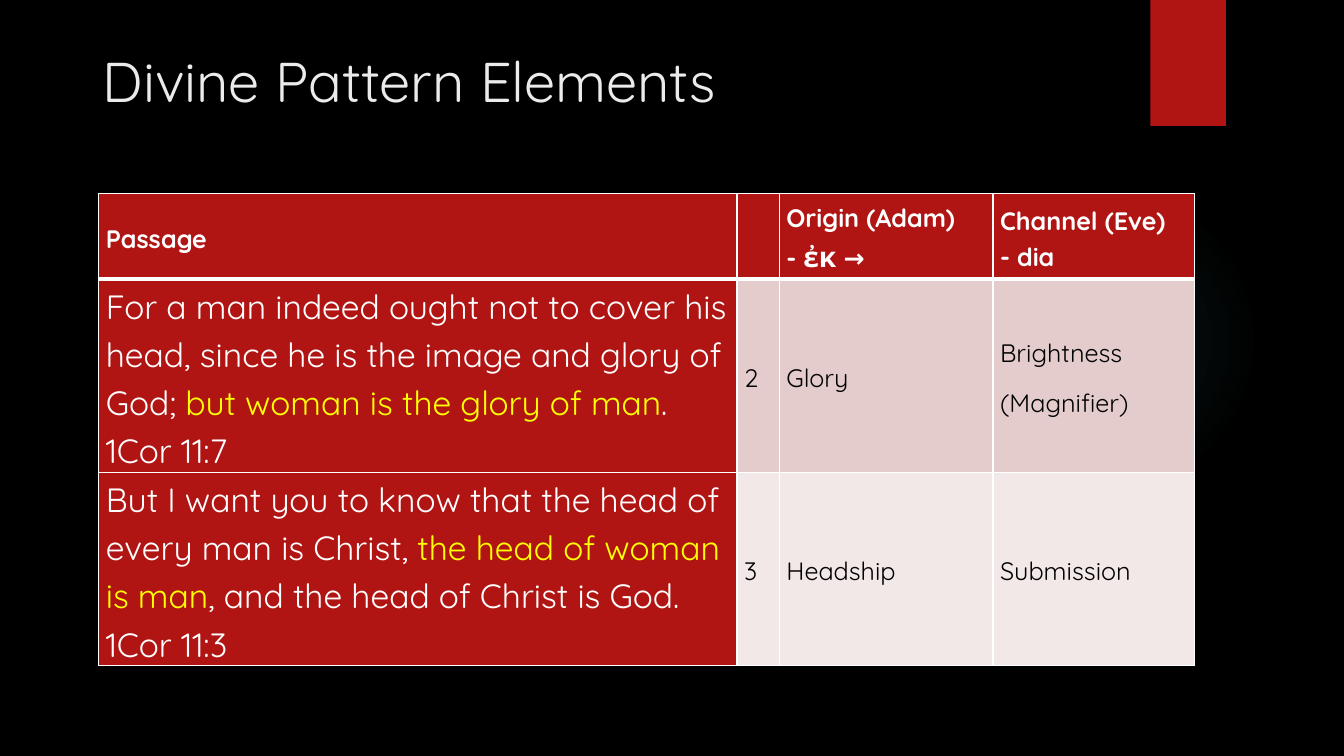
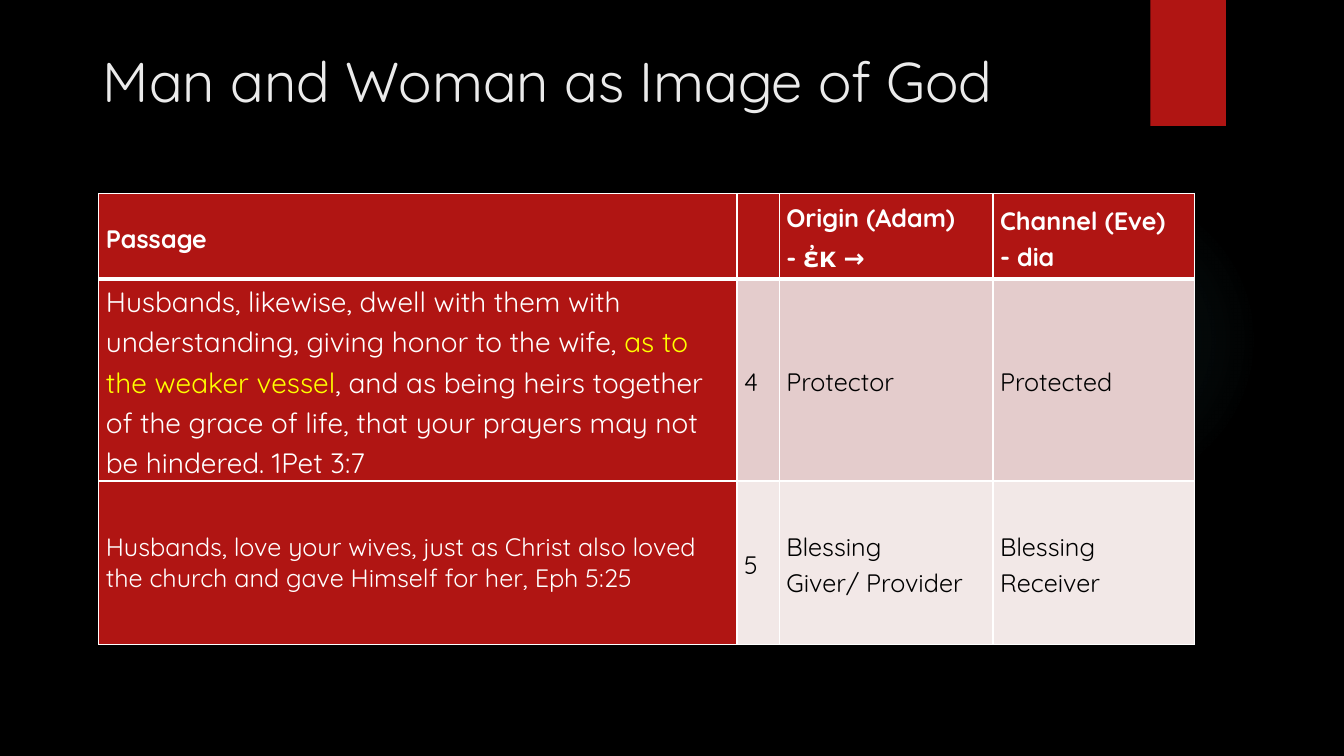
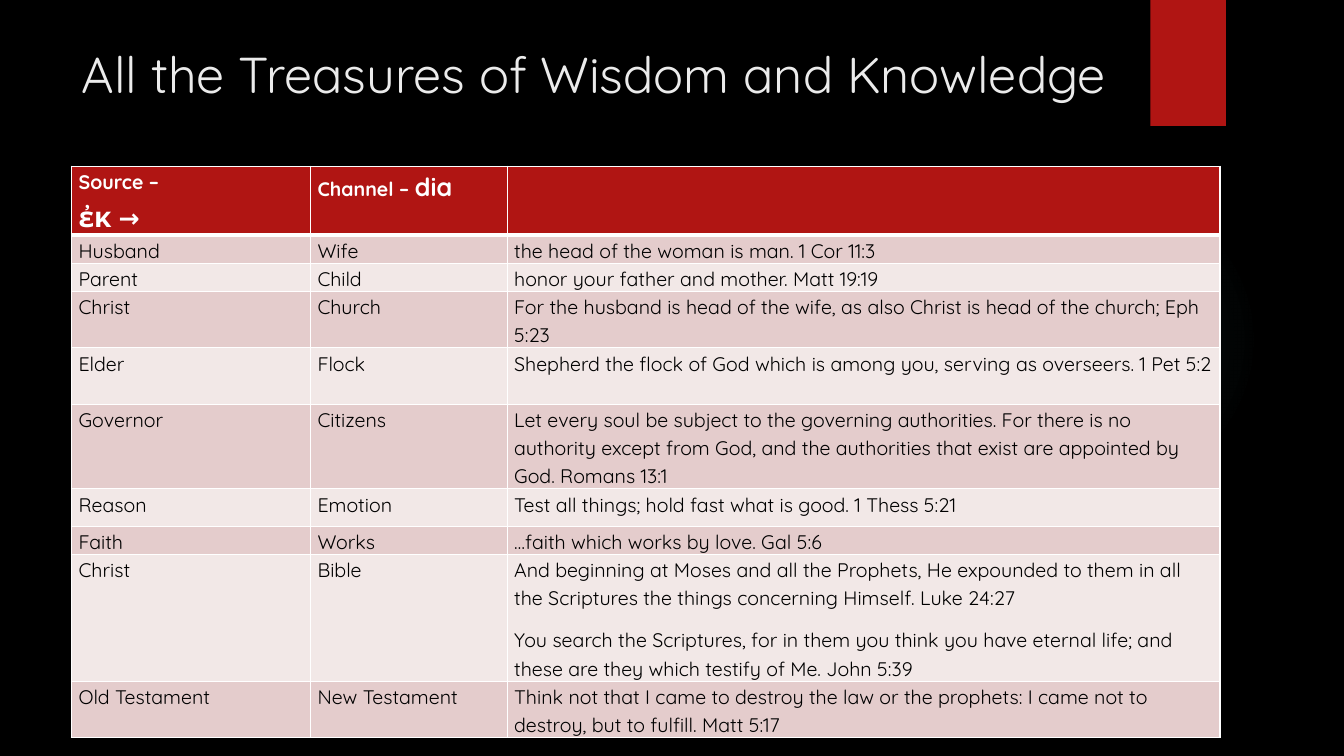
from dataclasses import dataclass

from pptx import Presentation
from pptx.dml.color import RGBColor
from pptx.enum.shapes import MSO_SHAPE
from pptx.enum.text import MSO_ANCHOR, PP_ALIGN
from pptx.oxml import parse_xml
from pptx.oxml.ns import nsdecls, qn
from pptx.slide import Slide, SlideLayout
from pptx.table import _Cell
from pptx.text.text import _Paragraph
from pptx.util import Inches, Pt

OVAL = MSO_SHAPE.OVAL
RECTANGLE = MSO_SHAPE.RECTANGLE
TOP = MSO_ANCHOR.TOP
MIDDLE = MSO_ANCHOR.MIDDLE
LEFT = PP_ALIGN.LEFT

BLACK = RGBColor(0x00, 0x00, 0x00)
WHITE = RGBColor(0xFF, 0xFF, 0xFF)
RED = RGBColor(0xB0, 0x15, 0x13)
YELLOW = RGBColor(0xFF, 0xFF, 0x00)
TITLE_GREY = RGBColor(0xEB, 0xEB, 0xEB)
ROSE = RGBColor(0xE4, 0xCC, 0xCC)
PALE_ROSE = RGBColor(0xF2, 0xE8, 0xE7)
GLOW = RGBColor(0x50, 0xB9, 0xC1)

FONT = "Quicksand"
GLOW_STOPS = ((0, 7), (36, 6), (69, 0))
THIN_BORDER = 1
HEADER_RULE = 3


@dataclass(frozen=True)
class Piece:
    text: str
    size: float | None = None
    color: RGBColor | None = None


@dataclass(frozen=True)
class Entry:
    paragraphs: tuple[tuple[Piece, ...], ...]
    size: float | None = None
    anchor: MSO_ANCHOR | None = None
    line_spacing: float = 1.15
    space_after: float = 10


@dataclass(frozen=True)
class Row:
    height: float
    entries: tuple[Entry, ...]


@dataclass(frozen=True)
class Page:
    title: str
    title_left: float
    title_top: float
    title_size: float
    table_left: float
    table_top: float
    columns: tuple[float, ...]
    rows: tuple[Row, ...]
    size: float
    anchor: MSO_ANCHOR
    red_first_column: bool


def plain(*paragraphs: str) -> Entry:
    return Entry(tuple((Piece(text),) for text in paragraphs))


def mixed(*pieces: Piece, size: float | None = None,
          anchor: MSO_ANCHOR | None = None) -> Entry:
    return Entry((pieces,), size, anchor)


def plain_row(height: float, *texts: str) -> Row:
    return Row(height, tuple(plain(text) for text in texts))


EMPTY = Entry(())

PASSAGE_COLUMNS = (6.33, 0.42, 2.12, 2)
PASSAGE_HEADER = Row(0.85, (
    plain("Passage"),
    EMPTY,
    mixed(Piece("Origin (Adam) \n- "), Piece("ἐκ", 20), Piece(" →")),
    plain("Channel (Eve) \n- dia"),
))


def passage_page(title: str, *rows: Row) -> Page:
    return Page(title, 0.92, 0.41, 40, 0.98, 1.92, PASSAGE_COLUMNS,
                (PASSAGE_HEADER, *rows), 18, MIDDLE, True)


PAGES = (
    passage_page(
        "Divine Pattern Elements",
        Row(1.91, (
            mixed(
                Piece("For a man indeed ought not to cover his head, since he "
                      "is the image and glory of God; "),
                Piece("but woman is the glory of man", color=YELLOW),
                Piece(". 1Cor 11:7"),
                size=24, anchor=TOP),
            plain("2"),
            plain("Glory"),
            plain("Brightness", "(Magnifier)"),
        )),
        Row(1.91, (
            mixed(
                Piece("But I want you to know that the head of every man is "
                      "Christ, "),
                Piece("the head of woman is man", color=YELLOW),
                Piece(", and the head of Christ is God. 1Cor 11:3"),
                size=24, anchor=TOP),
            plain("3"),
            plain("Headship"),
            plain("Submission"),
        )),
    ),
    passage_page(
        "Man and Woman as Image of God",
        Row(2, (
            mixed(
                Piece("Husbands, likewise, dwell with them with understanding, "
                      "giving honor to the wife, "),
                Piece("as to the weaker vessel", color=YELLOW),
                Piece(", and as being heirs together of the grace of life, "
                      "that your prayers may not be hindered. 1Pet 3:7"),
                size=20),
            plain("4"),
            plain("Protector"),
            plain("Protected"),
        )),
        Row(1.62, (
            Entry(((Piece("Husbands, love your wives, just as Christ also loved "
                          "the church and gave Himself for her, Eph 5:25"),),),
                  line_spacing=1, space_after=0),
            plain("5"),
            plain("Blessing \nGiver/ Provider"),
            plain("Blessing Receiver"),
        )),
    ),
    Page(
        "All the Treasures of Wisdom and Knowledge", 0.71, 0.38, 36,
        0.71, 1.65, (2.37, 1.95, 7.07),
        (
            Row(0.68, (
                mixed(Piece("Source – \n"), Piece("ἐκ", 20), Piece(" →", 18)),
                mixed(Piece("Channel – "), Piece("dia", 18)),
                EMPTY,
            )),
            plain_row(0.28, "Husband", "Wife",
                      "the head of the woman is man. 1 Cor 11:3"),
            plain_row(0.28, "Parent", "Child",
                      "honor your father and mother. Matt 19:19"),
            plain_row(0.56, "Christ", "Church",
                      "For the husband is head of the wife, as also Christ is "
                      "head of the church; Eph 5:23"),
            plain_row(0.56, "Elder", "Flock",
                      "Shepherd the flock of God which is among you, serving as "
                      "overseers. 1 Pet 5:2"),
            plain_row(0.84, "Governor", "Citizens",
                      "Let every soul be subject to the governing authorities. "
                      "For there is no authority except from God, and the "
                      "authorities that exist are appointed by God. Romans 13:1"),
            plain_row(0.37, "Reason", "Emotion",
                      "Test all things; hold fast what is good. 1 Thess 5:21"),
            plain_row(0.28, "Faith", "Works",
                      "…faith which works by love. Gal 5:6"),
            Row(1.26, (
                plain("Christ"),
                plain("Bible"),
                plain("And beginning at Moses and all the Prophets, He expounded "
                      "to them in all the Scriptures the things concerning "
                      "Himself. Luke 24:27",
                      "You search the Scriptures, for in them you think you have "
                      "eternal life; and these are they which testify of Me. "
                      "John 5:39"),
            )),
            plain_row(0.56, "Old Testament", "New Testament",
                      "Think not that I came to destroy the law or the prophets: "
                      "I came not to destroy, but to fulfill. Matt 5:17"),
        ),
        14, TOP, False,
    ),
)


def add_run(paragraph: _Paragraph, text: str, size: float, color: RGBColor,
            bold: bool = False) -> None:
    run = paragraph.add_run()
    run.text = text
    run.font.name = FONT
    run.font.size = Pt(size)
    run.font.bold = bold
    run.font.color.rgb = color


def decorate_layout(slide: Slide, layout: SlideLayout) -> None:
    glow = slide.shapes.add_shape(OVAL, Inches(9.41), Inches(1.83),
                                  Inches(3.08), Inches(3.08))
    glow.fill.gradient()
    stops = "".join(
        f'<a:gs pos="{position * 1000}"><a:srgbClr val="{GLOW}">'
        f'<a:alpha val="{alpha * 1000}"/></a:srgbClr></a:gs>'
        for position, alpha in GLOW_STOPS)
    properties = glow.element.spPr
    properties.replace(properties.find(qn("a:gradFill")), parse_xml(
        f'<a:gradFill {nsdecls("a")} rotWithShape="1"><a:gsLst>{stops}</a:gsLst>'
        '<a:path path="circle"><a:fillToRect l="50000" t="50000" r="50000" '
        'b="50000"/></a:path></a:gradFill>'))

    ribbon = slide.shapes.add_shape(RECTANGLE, Inches(11.41), Inches(0),
                                    Inches(0.75), Inches(1.25))
    ribbon.fill.solid()
    ribbon.fill.fore_color.rgb = RED

    for offset, ornament in enumerate((glow, ribbon)):
        ornament.line.fill.background()
        ornament.shadow.inherit = False
        ornament.element.nvSpPr.cNvPr.id = 100 + offset
        layout.shapes.element.insert(2 + offset, ornament.element)


def set_title(slide: Slide, page: Page) -> None:
    title = slide.shapes.title
    title.left, title.top = Inches(page.title_left), Inches(page.title_top)
    title.width, title.height = Inches(10.98), Inches(1.15)
    title.text_frame.word_wrap = True
    title.text_frame.vertical_anchor = TOP
    heading = title.text_frame.paragraphs[0]
    heading.alignment = LEFT
    add_run(heading, page.title, page.title_size, TITLE_GREY)


def set_borders(cell: _Cell, top: float, bottom: float) -> None:
    widths = {"L": THIN_BORDER, "R": THIN_BORDER, "T": top, "B": bottom}
    properties = cell._tc.get_or_add_tcPr()
    for index, (side, width) in enumerate(widths.items()):
        properties.insert(index, parse_xml(
            f'<a:ln{side} {nsdecls("a")} w="{Pt(width)}"><a:solidFill>'
            f'<a:srgbClr val="{WHITE}"/></a:solidFill></a:ln{side}>'))


def fill_cell(cell: _Cell, entry: Entry, page: Page, fill: RGBColor,
              header: bool) -> None:
    cell.fill.solid()
    cell.fill.fore_color.rgb = fill
    cell.margin_left = cell.margin_right = Inches(0.07)
    cell.margin_top = cell.margin_bottom = Inches(0)
    cell.vertical_anchor = entry.anchor or page.anchor
    ink = WHITE if fill == RED else BLACK
    frame = cell.text_frame
    for index, pieces in enumerate(entry.paragraphs):
        paragraph = frame.add_paragraph() if index else frame.paragraphs[0]
        paragraph.line_spacing = entry.line_spacing
        paragraph.space_after = Pt(entry.space_after)
        for piece in pieces:
            size = piece.size or entry.size or page.size
            for line_index, line in enumerate(piece.text.split("\n")):
                if line_index:
                    paragraph.add_line_break()
                if line:
                    add_run(paragraph, line, size, piece.color or ink, header)


def add_page_table(slide: Slide, page: Page) -> None:
    table = slide.shapes.add_table(
        len(page.rows), len(page.columns),
        Inches(page.table_left), Inches(page.table_top),
        Inches(sum(page.columns)),
        Inches(sum(row.height for row in page.rows))).table
    table.horz_banding = False
    for column, width in zip(table.columns, page.columns):
        column.width = Inches(width)
    for row_index, row in enumerate(page.rows):
        table.rows[row_index].height = Inches(row.height)
        header = row_index == 0
        band = ROSE if row_index % 2 else PALE_ROSE
        for column_index, entry in enumerate(row.entries):
            is_red = header or (page.red_first_column and column_index == 0)
            cell = table.cell(row_index, column_index)
            fill_cell(cell, entry, page, RED if is_red else band, header)
            set_borders(cell,
                        HEADER_RULE if row_index == 1 else THIN_BORDER,
                        HEADER_RULE if header else THIN_BORDER)


def main() -> None:
    presentation = Presentation()
    presentation.slide_width = Inches(13.33)
    presentation.slide_height = Inches(7.5)
    backdrop = presentation.slide_master.background.fill
    backdrop.solid()
    backdrop.fore_color.rgb = BLACK
    layout = presentation.slide_layouts.get_by_name("Title Only")
    for index, page in enumerate(PAGES):
        slide = presentation.slides.add_slide(layout)
        if index == 0:
            decorate_layout(slide, layout)
        set_title(slide, page)
        add_page_table(slide, page)
    presentation.save("out.pptx")


if __name__ == "__main__":
    main()
